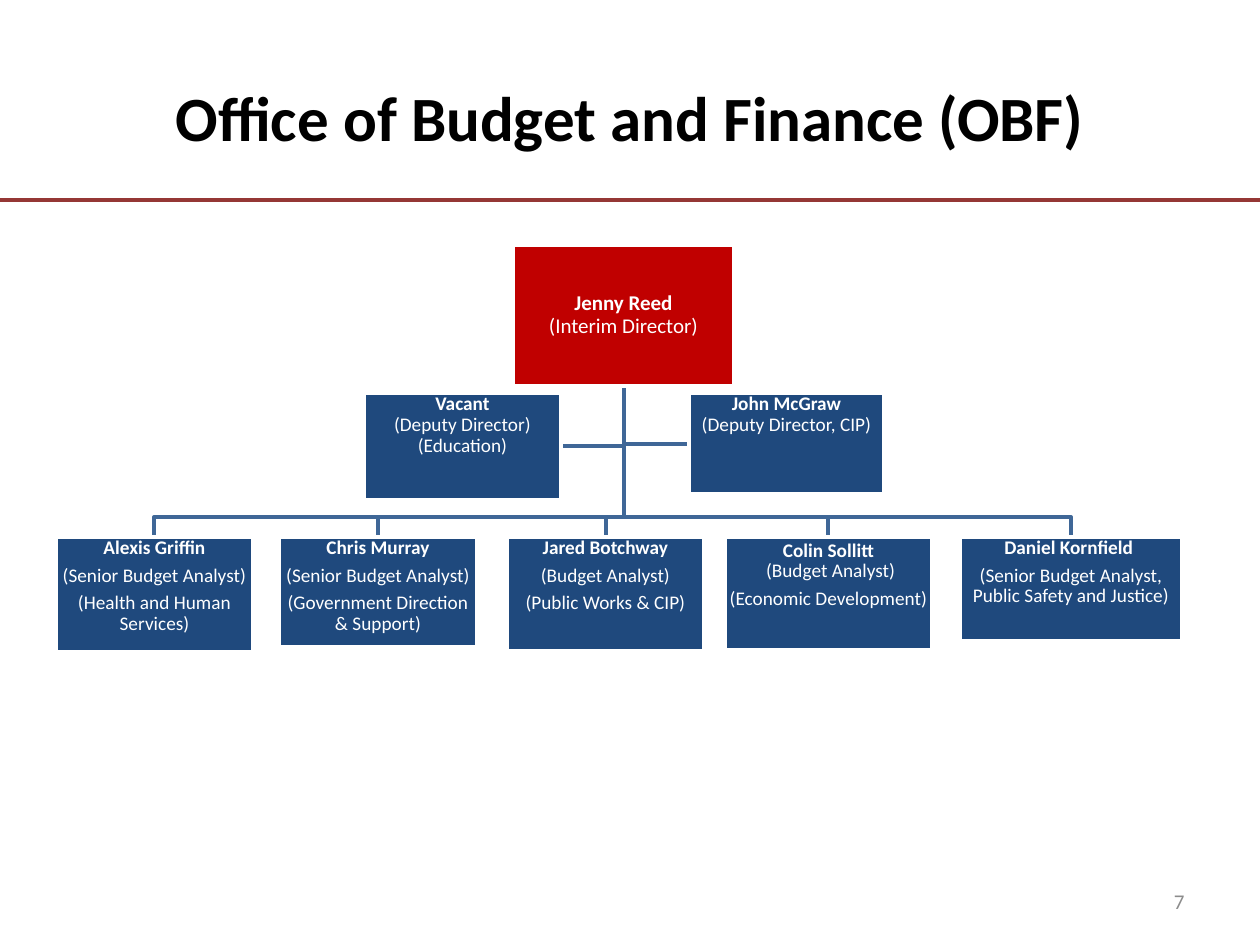
from pptx import Presentation
from pptx import util as u
from pptx.dml.color import RGBColor
from pptx.enum import shapes, text
from pptx.oxml.ns import qn

COLORS = {
    "rule": "953735", "branch": "3F6797", "director": "C00000",
    "staff": "1F497D", "white": "FFFFFF", "title": "000000", "number": "8C8C8C",
}
SCALE = 914400 / 126


def px(length):
    return u.Emu(round(length * SCALE))


def rgb(name):
    return RGBColor.from_string(COLORS[name])


class Chart:
    font = "Calibri"
    line_width = u.Pt(2)

    def __init__(self, slide):
        self.slide = slide

    def style(self, paragraph, size, color, align):
        paragraph.alignment = align
        paragraph.font.name = self.font
        paragraph.font.size = u.Pt(size)
        paragraph.font.color.rgb = rgb(color)

    def stroke(self, part, color):
        part.line.color.rgb = rgb(color)
        part.line.width = self.line_width

    def label(self, wording, bounds, size, color, align, bold=False):
        frame = self.slide.shapes.add_textbox(*map(px, bounds)).text_frame
        frame.word_wrap = True
        frame.vertical_anchor = text.MSO_ANCHOR.MIDDLE
        paragraph = frame.paragraphs[0]
        paragraph.text = wording
        self.style(paragraph, size, color, align)
        paragraph.font.bold = bold

    def box(self, bounds, entries, fill="staff", size=11,
            anchor=text.MSO_ANCHOR.TOP, tight_name=False):
        """Draw a post; each entry is a paragraph given as a list of lines, the name first."""
        post = self.slide.shapes.add_shape(shapes.MSO_SHAPE.RECTANGLE, *map(px, bounds))
        post.shadow.inherit = False
        post.fill.solid()
        post.fill.fore_color.rgb = rgb(fill)
        self.stroke(post, "white")
        frame = post.text_frame
        frame.word_wrap = True
        frame.vertical_anchor = anchor
        frame.margin_left = frame.margin_right = px(1)
        frame.margin_top = frame.margin_bottom = px(1)
        for row, lines in enumerate(entries):
            paragraph = frame.add_paragraph() if row else frame.paragraphs[0]
            self.style(paragraph, size, "white", text.PP_ALIGN.CENTER)
            if row or not tight_name:
                paragraph.line_spacing = 0.9
                paragraph.space_after = u.Pt(0.35 * size)
            for position, line in enumerate(lines):
                if position:
                    paragraph.add_line_break()
                run = paragraph.add_run()
                run.text = line
                run.font.bold = row == 0 and position == 0

    def rule(self, y, width):
        rule = self.slide.shapes.add_connector(
            shapes.MSO_CONNECTOR.STRAIGHT, px(0), px(y), px(width), px(y))
        self.stroke(rule, "rule")
        properties = rule._element.spPr
        properties.append(properties.makeelement(qn("a:effectLst"), {}))

    def branch(self, start, *corners):
        """Draw an open bent line through the corners."""
        builder = self.slide.shapes.build_freeform(*start, scale=SCALE)
        builder.add_line_segments(corners, close=False)
        branch = builder.convert_to_shape()
        branch.shadow.inherit = False
        branch.fill.background()
        self.stroke(branch, "branch")


ANALYST_TOP, BRANCH_Y, DEPUTY_TOP = 537, 517, 393
TRUNK_X, TRUNK_TOP = 624, 386
ANALYSTS = [  # left, width, height, entries, tight name
    (56, 197, 115, [["Alexis Griffin"], ["(Senior Budget Analyst)"],
                    ["(Health and Human Services)"]], False),
    (279, 198, 110, [["Chris Murray"], ["(Senior Budget Analyst)"],
                     ["(Government Direction & Support)"]], False),
    (507, 197, 114, [["Jared Botchway"], ["(Budget Analyst)"],
                     ["(Public Works & CIP)"]], False),
    (725, 207, 113, [["Colin Sollitt"], [" (Budget Analyst)"],
                     ["(Economic Development)"]], True),
    (960, 222, 104, [["Daniel Kornfield "],
                     ["(Senior Budget Analyst, Public Safety and Justice)"]], False),
]
DEPUTIES = [  # left, width, height, lines
    (689, 195, 101, ["John McGraw", "(Deputy Director, CIP)"]),
    (364, 197, 107, ["Vacant", "(Deputy Director)", "(Education)"]),
]


def main():
    deck = Presentation()
    deck.slide_width, deck.slide_height = px(1260), px(945)
    chart = Chart(deck.slides.add_slide(deck.slide_layouts[6]))

    chart.rule(200, 1260)
    chart.label("Office of Budget and Finance (OBF)", (63, 38, 1134, 157), 36,
                "title", text.PP_ALIGN.CENTER, bold=True)
    chart.label("7", (903, 876, 294, 50), 12, "number", text.PP_ALIGN.RIGHT)

    trunk_start = (TRUNK_X, TRUNK_TOP)
    for left, width, height, _ in reversed(DEPUTIES):
        middle = DEPUTY_TOP + height / 2
        edge = left if left > TRUNK_X else left + width
        chart.branch(trunk_start, (TRUNK_X, middle), (edge, middle))
    for left, width, *_ in reversed(ANALYSTS):
        center = left + width / 2
        chart.branch(trunk_start, (TRUNK_X, BRANCH_Y), (center, BRANCH_Y),
                     (center, ANALYST_TOP))

    chart.box((513, 245, 221, 141), [["Jenny Reed", "(Interim Director)"]],
              "director", 12, text.MSO_ANCHOR.MIDDLE)
    for left, width, height, entries, tight in ANALYSTS:
        chart.box((left, ANALYST_TOP, width, height), entries, tight_name=tight)
    for left, width, height, lines in DEPUTIES:
        chart.box((left, DEPUTY_TOP, width, height), [lines])

    deck.save("out.pptx")


if __name__ == "__main__":
    main()
